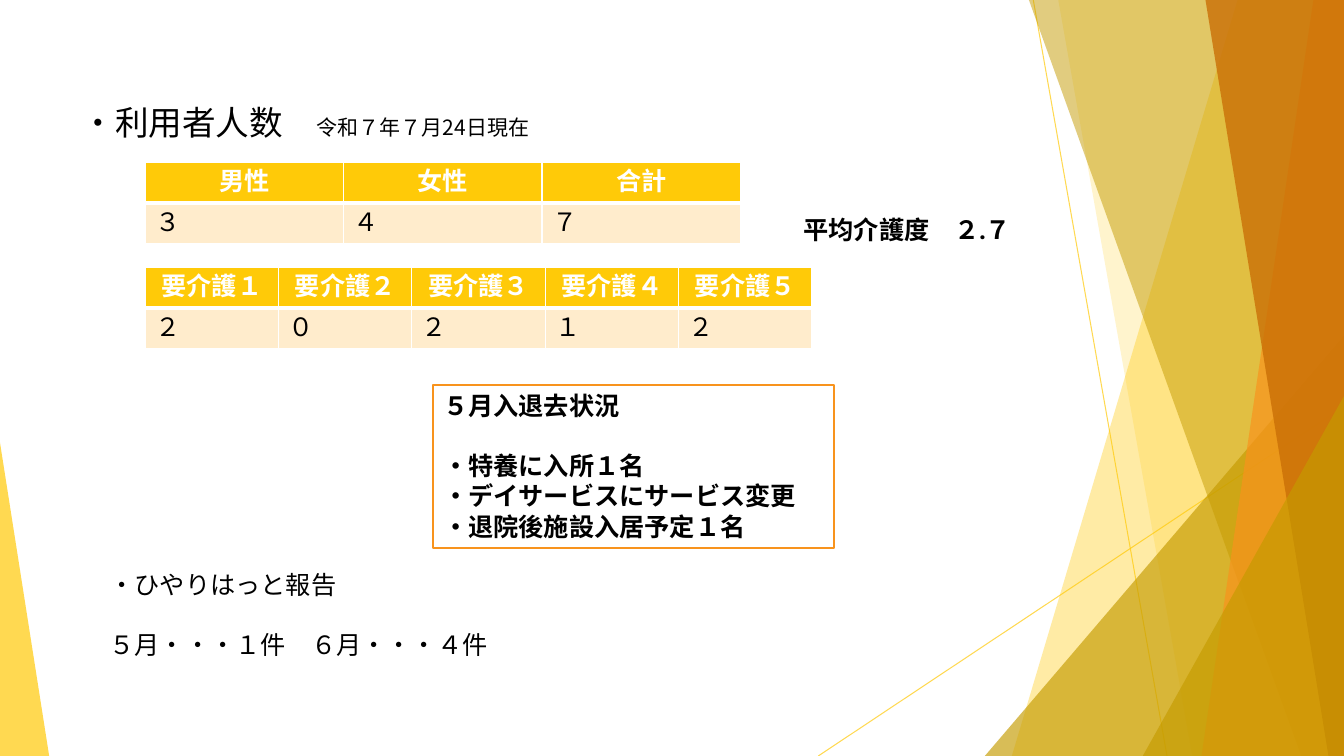
from lxml.etree import SubElement
from pptx import Presentation
from pptx.dml.color import RGBColor
from pptx.enum.shapes import MSO_CONNECTOR, MSO_SHAPE
from pptx.enum.text import MSO_ANCHOR, PP_ALIGN
from pptx.oxml.ns import qn
from pptx.util import Cm, Pt

HUES = {"gold": "FFCA08", "olive": "C59B00", "orange": "F8931D", "rust": "CA6F06",
        "cream": "FFECCC", "white": "FFFFFF", "black": "000000"}
HUES = {name: RGBColor.from_string(code) for name, code in HUES.items()}
WIDE, HIGH = 33.87, 19.05

deck = Presentation()
deck.slide_width, deck.slide_height = Cm(WIDE), Cm(HIGH)
slide = deck.slides.add_slide(deck.slide_layouts[6])
shapes = slide.shapes


def fade(shape, alpha):
    """Make every colour of the shape opaque to alpha percent."""
    for tone in shape._element.spPr.iter(qn("a:srgbClr")):
        SubElement(tone, qn("a:alpha"), val=str(alpha * 1000))


def style(run, size=18, bold=False, hue="black", face="Karla"):
    """Format a run, with one face for Latin and Japanese text."""
    font = run.font
    font.size, font.bold, font.name = Pt(size), bold, face
    font.color.rgb = HUES[hue]
    SubElement(run._r.get_or_add_rPr(), qn("a:ea"), typeface=face)


# Thin gold lines
for ends in [(26.04, 0, 29.41, HIGH), (WIDE, 10.24, 20.62, HIGH)]:
    line = shapes.add_connector(MSO_CONNECTOR.STRAIGHT, *map(Cm, ends))
    line.line.color.rgb = HUES["gold"]
    line.line.width = Pt(0.75)
    fade(line, 70)
    SubElement(line._element.spPr, qn("a:effectLst"))

# Shards: bands to the right edge (top x, foot x) or triangles (left, top, width, tip)
shards = [
    ("gold", 36, (31.19, 25.5)),
    ("gold", 20, (26.67, 30.05)),
    ("olive", 66, (24.82, 8.46, 9.05, 1)),
    ("olive", 50, (25.93, 32.79)),
    ("orange", 70, (33.1, 30.28)),
    ("rust", 80, (30.38, 33.48)),
    ("olive", 66, (28.8, 9.98, 5.07, 1)),
    ("gold", 70, (0, 11.15, 1.24, 0)),
]
for hue, alpha, form in shards:
    if len(form) == 2:
        top, foot = form
        pen = shapes.build_freeform(Cm(top), 0)
        pen.add_line_segments([(Cm(WIDE), 0), (Cm(WIDE), Cm(HIGH)), (Cm(foot), Cm(HIGH))])
        shard = pen.convert_to_shape()
    else:
        left, top, width, tip = form
        shard = shapes.add_shape(MSO_SHAPE.ISOSCELES_TRIANGLE,
                                 Cm(left), Cm(top), Cm(width), Cm(HIGH - top))
        shard.adjustments[0] = tip
    shard.shadow.inherit = False
    shard.fill.solid()
    shard.fill.fore_color.rgb = HUES[hue]
    shard.line.fill.background()
    fade(shard, alpha)

# Title
title = shapes.add_textbox(Cm(1.22), Cm(2.34), Cm(12.95), Cm(1.45)).text_frame
title.word_wrap = True
title.vertical_anchor = MSO_ANCHOR.MIDDLE
title.paragraphs[0].alignment = PP_ALIGN.CENTER
for text, size in [("・利用者人数　", 24), ("令和７年７月24日現在", 15)]:
    run = title.paragraphs[0].add_run()
    run.text = text
    style(run, size, face="Noto Sans CJK JP")

# Tables of users
tables = [
    (4.09, 5, [("男性", "女性", "合計"), "３４７"]),
    (6.73, 3.36, [[f"要介護{level}" for level in "１２３４５"], "２０２１２"]),
]
for top, width, rows in tables:
    count = len(rows[0])
    grid = shapes.add_table(2, count, Cm(3.66), Cm(top), Cm(width * count), Cm(2.06)).table
    for col in grid.columns:
        col.width = Cm(width)
    for y, row in enumerate(rows):
        head = y == 0
        for x, text in enumerate(row):
            cell = grid.cell(y, x)
            cell.text = text
            para = cell.text_frame.paragraphs[0]
            para.alignment = PP_ALIGN.CENTER if head else PP_ALIGN.LEFT
            style(para.runs[0], bold=head, hue="white" if head else "black")
            props = cell._tc.get_or_add_tcPr()
            for side in "LRTB":
                thick = 3 if side == ("B" if head else "T") else 1
                edge = SubElement(props, qn(f"a:ln{side}"), w=str(Pt(thick)))
                paint = SubElement(edge, qn("a:solidFill"))
                SubElement(paint, qn("a:srgbClr"), val=str(HUES["white"]))
            cell.fill.solid()
            cell.fill.fore_color.rgb = HUES["gold" if head else "cream"]

# Notes: place, weight, lines
mean = shapes.add_textbox(Cm(20), Cm(5.28), Cm(6.98), Cm(1.03))
moves = shapes.add_shape(MSO_SHAPE.RECTANGLE, Cm(10.92), Cm(9.7), Cm(10.11), Cm(4.11))
moves.shadow.inherit = False
moves.fill.solid()
moves.fill.fore_color.rgb = HUES["white"]
moves.line.color.rgb = HUES["orange"]
moves.line.width = Pt(1.5)
report = shapes.add_textbox(Cm(2.51), Cm(14.22), Cm(10.36), Cm(3.33))
notes = [
    (mean, True, ["平均介護度　２.７"]),
    (moves, True, ["５月入退去状況", "・特養に入所１名", "・デイサービスにサービス変更", "・退院後施設入居予定１名"]),
    (report, False, ["・ひやりはっと報告", "５月・・・１件　６月・・・４件"]),
]
for box, bold, lines in notes:
    frame = box.text_frame
    frame.word_wrap = True
    frame.vertical_anchor = MSO_ANCHOR.TOP
    frame.text = "\n".join(lines)
    for para in frame.paragraphs:
        para.alignment = PP_ALIGN.LEFT
        style(para.runs[0], bold=bold)
    if len(lines) > 1:
        frame.paragraphs[1].space_before = Pt(21.6)

deck.save("out.pptx")
